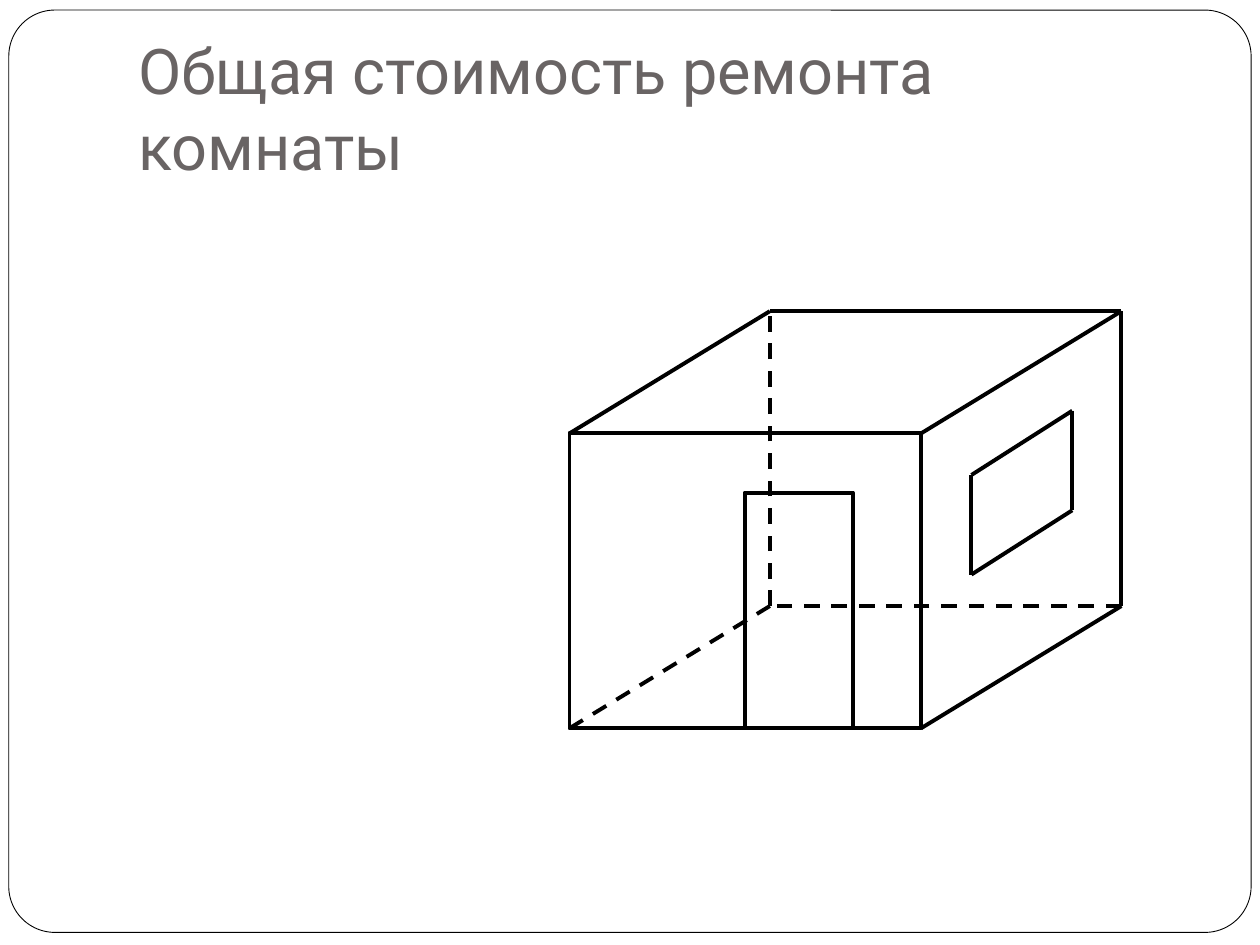
from pptx import Presentation
from pptx.dml.color import RGBColor
from pptx.enum.dml import MSO_LINE
from pptx.enum.shapes import MSO_CONNECTOR, MSO_SHAPE
from pptx.enum.text import MSO_ANCHOR
from pptx.oxml.ns import qn
from pptx.util import Inches, Pt
from lxml import etree

RECTANGLE, ROUNDED = MSO_SHAPE.RECTANGLE, MSO_SHAPE.ROUNDED_RECTANGLE
STRAIGHT, DASH, BOTTOM = MSO_CONNECTOR.STRAIGHT, MSO_LINE.DASH, MSO_ANCHOR.BOTTOM

THEME = {
    "font": "Roboto", "title_size": Pt(36), "title": RGBColor(0x69, 0x64, 0x64),
    "paper": RGBColor(255, 255, 255), "ink": RGBColor(0, 0, 0),
    "frame_width": Pt(0.5), "edge_width": Pt(2.25),
}

# Content: boxes are left, top, width, height in inches
TITLE = "Общая стоимость ремонта комнаты"
TITLE_BOX = (1, 0.3, 8.5, 1.25)
FRAME = (0.07, 0.08, 9.86, 7.32)
FRONT_WALL = (4.52, 3.44, 2.79, 2.34)
DOOR = (5.91, 3.91, 0.86, 1.87)
DEPTH = (1.59, -0.97)  # offset from the front wall to the back wall
WINDOW = {"left": 7.71, "top": 3.77, "height": 0.79, "depth": (0.8, -0.51)}


def add_box(shapes, kind, box, width, filled=True):
    shape = shapes.add_shape(kind, *map(Inches, box))
    shape.shadow.inherit = False
    if filled:
        shape.fill.solid()
        shape.fill.fore_color.rgb = THEME["paper"]
    else:
        shape.fill.background()
    shape.line.color.rgb = THEME["ink"]
    shape.line.width = width
    return shape


def add_edge(shapes, start, end, hidden=False):
    edge = shapes.add_connector(STRAIGHT, *map(Inches, (*start, *end)))
    edge.line.color.rgb = THEME["ink"]
    edge.line.width = THEME["edge_width"]
    if hidden:
        edge.line.dash_style = DASH
    etree.SubElement(edge._element.spPr, qn("a:effectLst"))


def shift(point, offset):
    return point[0] + offset[0], point[1] + offset[1]


def add_title(slide):
    text_frame = slide.shapes.add_textbox(*map(Inches, TITLE_BOX)).text_frame
    text_frame.word_wrap = True
    text_frame.vertical_anchor = BOTTOM
    text_frame.margin_bottom = Inches(0.1)
    paragraph = text_frame.paragraphs[0]
    paragraph.text = TITLE
    paragraph.font.name = THEME["font"]
    paragraph.font.size = THEME["title_size"]
    paragraph.font.color.rgb = THEME["title"]


def add_room(slide):
    shapes = slide.shapes.add_group_shape().shapes
    add_box(shapes, RECTANGLE, FRONT_WALL, THEME["edge_width"])

    # Edges running back from the front corners; the lower left one is hidden
    left, top, width, height = FRONT_WALL
    front = [(left, top), (left + width, top),
             (left + width, top + height), (left, top + height)]
    back = [shift(corner, DEPTH) for corner in front]
    for index in range(4):
        add_edge(shapes, front[index], back[index], hidden=index == 3)

    # Back wall: every edge meeting the lower left corner is hidden
    for index in range(4):
        add_edge(shapes, back[index], back[(index + 1) % 4], hidden=index >= 2)

    add_box(shapes, RECTANGLE, DOOR, THEME["edge_width"], filled=False)

    # Window on the side wall
    near_top = WINDOW["left"], WINDOW["top"]
    near_bottom = shift(near_top, (0, WINDOW["height"]))
    far_top, far_bottom = (shift(p, WINDOW["depth"]) for p in (near_top, near_bottom))
    corners = [near_top, far_top, far_bottom, near_bottom]
    for index in range(4):
        add_edge(shapes, corners[index], corners[(index + 1) % 4])


def main():
    presentation = Presentation()
    presentation.slide_width, presentation.slide_height = Inches(10), Inches(7.5)
    slide = presentation.slides.add_slide(presentation.slide_layouts[6])
    frame = add_box(slide.shapes, ROUNDED, FRAME, THEME["frame_width"])
    frame.adjustments[0] = 0.05
    add_title(slide)
    add_room(slide)
    presentation.save("out.pptx")


if __name__ == "__main__":
    main()
